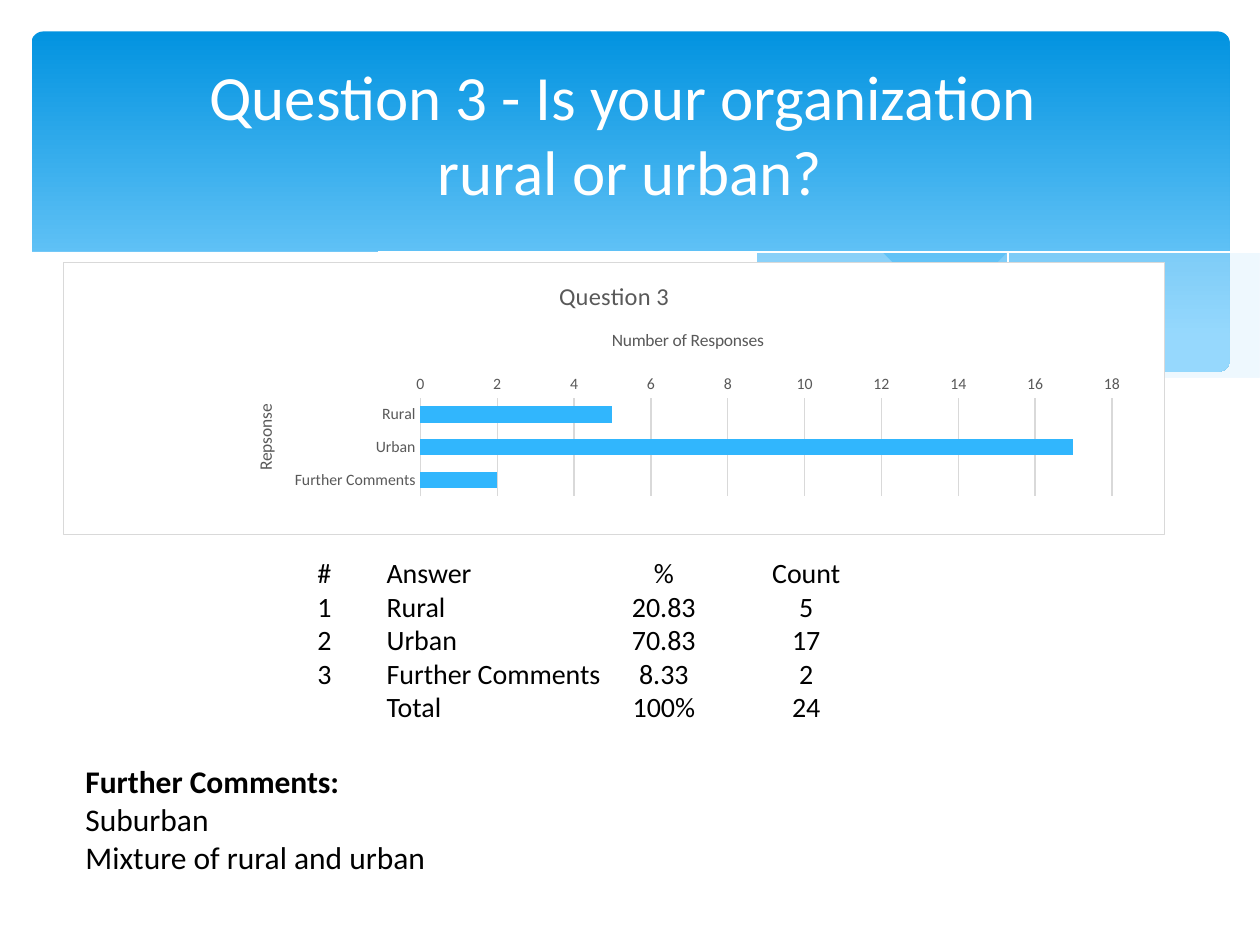
from lxml import etree
from pptx import Presentation
from pptx.chart.data import CategoryChartData
from pptx.dml.color import RGBColor
from pptx.enum.chart import XL_CHART_TYPE, XL_TICK_MARK
from pptx.enum.shapes import MSO_SHAPE
from pptx.enum.text import MSO_ANCHOR, MSO_AUTO_SIZE, PP_ALIGN
from pptx.oxml import parse_xml
from pptx.oxml.ns import nsdecls, qn
from pptx.util import Inches, Pt

BAR = XL_CHART_TYPE.BAR_CLUSTERED
NO_TICK = XL_TICK_MARK.NONE
ROUNDED = MSO_SHAPE.ROUNDED_RECTANGLE
MIDDLE = MSO_ANCHOR.MIDDLE
GROW = MSO_AUTO_SIZE.SHAPE_TO_FIT_TEXT
CENTER = PP_ALIGN.CENTER

FONT = "Calibri"
WHITE = RGBColor(0xFF, 0xFF, 0xFF)
BLACK = RGBColor(0, 0, 0)
GRAY = RGBColor(0x59, 0x59, 0x59)
RULE = RGBColor(0xD9, 0xD9, 0xD9)
BAR_BLUE = RGBColor(0x31, 0xB6, 0xFD)
BANNER_TOP = RGBColor(0x02, 0x93, 0xE0)
BANNER_END = RGBColor(0x83, 0xD3, 0xFE)
MIST = RGBColor(0xC6, 0xE7, 0xFC)

# Wave outlines: each is a list of curves joined end to end, in inches
RIGHT_WAVE = [
    [(9.76, 2), (9.21, 2.1), (8.61, 2.23), (7.79, 2.42), (6.61, 2.65)],
    [(6.61, 2.65), (7.19, 2.72), (7.69, 2.77), (8.14, 2.78), (8.63, 2.75),
     (9.05, 2.69), (9.42, 2.59), (9.76, 2.47)],
]
MIDDLE_WAVE = [
    [(8.93, 2.73), (8.07, 2.6), (7.06, 2.4), (6.29, 2.22), (5.55, 2.05),
     (4.89, 1.94), (4.2, 1.87), (3.61, 1.85), (2.86, 1.91)],
    [(2.86, 1.91), (3.62, 2.03), (4.49, 2.22), (5.66, 2.48), (6.5, 2.64),
     (7.22, 2.74), (7.85, 2.78), (8.38, 2.78), (8.93, 2.73)],
]
WHITE_WAVE = [
    [(9.77, 2.46), (9.4, 2.59), (8.99, 2.69), (8.5, 2.75), (8.09, 2.77),
     (7.44, 2.74), (6.68, 2.65), (5.79, 2.5), (4.47, 2.2), (3.65, 2.02),
     (2.92, 1.9), (2.3, 1.85), (1.77, 1.84), (1.19, 1.87), (0.76, 1.95),
     (0.46, 2.03), (0.23, 2.13)],
    [(0.23, 3.29), (9.77, 3.29)],
]
LEFT_LINE = [[(3.09, 1.95), (3.44, 1.9), (4.01, 1.87), (4.69, 1.89),
              (5.56, 1.97), (6.36, 2.08), (7.27, 2.26), (8.31, 2.51),
              (9.07, 2.72)]]
RIGHT_LINE = [[(6.13, 2.57), (6.95, 2.35), (7.76, 2.16), (8.66, 1.99),
               (9.24, 1.9), (9.75, 1.85)]]

ANSWERS = [
    ("#", "Answer", "%", "Count"),
    ("1", "Rural", "20.83", "5"),
    ("2", "Urban", "70.83", "17"),
    ("3", "Further Comments", "8.33", "2"),
    ("", "Total", "100%", "24"),
]
ANSWER_TABS = [(0.55, "l"), (2.75, "ctr"), (3.88, "ctr")]


def style_font(font, size, color, bold=False):
    for name, value in dict(name=FONT, size=Pt(size), bold=bold).items():
        setattr(font, name, value)
    font.color.rgb = color


def smooth(points, steps=5):
    """Catmull-Rom curve through the points."""
    ends = [points[0], *points, points[-1]]
    curve = []
    for a, b, c, d in zip(ends, ends[1:], ends[2:], ends[3:]):
        for t in (i / steps for i in range(steps)):
            curve.append(tuple(
                q + t * (r - p) / 2 + t**2 * (2 * p - 5 * q + 4 * r - w) / 2
                + t**3 * (3 * q - p - 3 * r + w) / 2
                for p, q, r, w in zip(a, b, c, d)))
    return curve + [points[-1]]


def add_wave(s, curves, fill=None, alpha=None):
    """A filled wave, or a white hairline when there is no fill."""
    points = [pt for curve in curves for pt in smooth(curve)]
    builder = s.shapes.build_freeform(*points[0], scale=Inches(1))
    builder.add_line_segments(points[1:], close=fill is not None)
    sp = builder.convert_to_shape()
    sp.shadow.inherit = False
    if fill is None:
        sp.fill.background()
        sp.line.color.rgb = WHITE
        sp.line.width = Pt(0)
        return
    sp.fill.solid()
    sp.fill.fore_color.rgb = fill
    sp.line.fill.background()
    if alpha:
        color = sp._element.spPr.find(qn("a:solidFill"))[0]
        etree.SubElement(color, qn("a:alpha")).set("val", str(alpha * 1000))


def add_banner(s):
    sp = s.shapes.add_shape(ROUNDED, Inches(0.25), Inches(0.25),
                            Inches(9.51), Inches(2.7))
    sp.adjustments[0] = 0.034
    sp.shadow.inherit = False
    sp.line.fill.background()
    sp.fill.gradient()
    sp.fill.gradient_angle = 270
    stops = ((0, BANNER_TOP), (0.9, BANNER_END))
    for stop, (position, color) in zip(sp.fill.gradient_stops, stops):
        stop.position = position
        stop.color.rgb = color


def set_layout(parent, **values):
    """Manual layout, as fractions of the chart area."""
    for old in parent.findall(qn("c:layout")):
        parent.remove(old)
    items = dict(xMode="edge", yMode="edge", **values)
    if "w" in values:
        items = dict(layoutTarget="inner", **items)
    layout = etree.Element(qn("c:layout"))
    manual = etree.SubElement(layout, qn("c:manualLayout"))
    for tag, value in items.items():
        etree.SubElement(manual, qn(f"c:{tag}")).set("val", str(value))
    tx = parent.find(qn("c:tx"))
    parent.insert(0 if tx is None else 1, layout)


def set_title(owner, text, size):
    tf = (owner.chart_title if hasattr(owner, "chart_title")
          else owner.axis_title).text_frame
    tf.text = text
    style_font(tf.paragraphs[0].runs[0].font, size, GRAY)


def add_response_chart(s):
    data = CategoryChartData()
    data.categories = ["Rural", "Urban", "Further Comments"]
    data.add_series("Series 1", (5, 17, 2))
    chart = s.shapes.add_chart(BAR, Inches(0.5), Inches(2.08), Inches(8.75),
                               Inches(2.17), data).chart
    chart.has_legend = False
    style_font(chart.font, 10, BLACK)
    set_title(chart, "Question 3", 14)

    plot = chart.plots[0]
    plot.gap_width = 100
    plot.vary_by_categories = False
    fill = plot.series[0].format.fill
    fill.solid()
    fill.fore_color.rgb = BAR_BLUE

    # Axes
    cat, val = chart.category_axis, chart.value_axis
    titles = ((cat, "Repsonse", 0.17, 0.51),
              (val, "Number of Responses", 0.495, 0.23))
    for axis, text, x, y in titles:
        set_title(axis, text, 10)
        set_layout(axis.axis_title._element, x=x, y=y)
        axis.major_tick_mark = axis.minor_tick_mark = NO_TICK
        style_font(axis.tick_labels.font, 9, GRAY)
    cat.reverse_order = True
    val.minimum_scale, val.maximum_scale, val.major_unit = 0, 18, 2
    val.format.line.fill.background()
    for line in (cat.format.line, val.major_gridlines.format.line):
        line.color.rgb = RULE
        line.width = Pt(0.75)

    # Plot position, chart background and border
    space = chart._chartSpace
    set_layout(space.chart.plotArea, x=0.324, y=0.498, w=0.628, h=0.361)
    space.chart.addnext(parse_xml(
        f'<c:spPr {nsdecls("c", "a")}><a:solidFill><a:srgbClr val="{WHITE}"/>'
        f'</a:solidFill><a:ln w="{Pt(0.75)}"><a:solidFill>'
        f'<a:srgbClr val="{RULE}"/></a:solidFill></a:ln></c:spPr>'))


def add_title(s, text):
    sp = s.shapes.title
    box = dict(left=0.5, top=0.37, width=9, height=1.37)
    for name, value in box.items():
        setattr(sp, name, Inches(value))
    tf = sp.text_frame
    tf.text = text
    tf.vertical_anchor = MIDDLE
    p = tf.paragraphs[0]
    p.alignment = CENTER
    for r in p.runs:
        style_font(r.font, 36, WHITE)
    s.shapes._spTree.append(sp._element)  # in front of the banner


def add_lines(s, box, lines, size, tabs=(), bold_first=False):
    tf = s.shapes.add_textbox(*map(Inches, box)).text_frame
    tf.word_wrap = True
    tf.auto_size = GROW
    for i, line in enumerate(lines):
        p = tf.paragraphs[0] if i == 0 else tf.add_paragraph()
        r = p.add_run()
        r.text = line
        style_font(r.font, size, BLACK, bold_first and i == 0)
        if tabs:
            stops = etree.SubElement(p._p.get_or_add_pPr(), qn("a:tabLst"))
            for position, align in tabs:
                tab = etree.SubElement(stops, qn("a:tab"))
                tab.set("pos", str(Inches(position)))
                tab.set("algn", align)


def main():
    prs = Presentation()
    prs.slide_width, prs.slide_height = Inches(10), Inches(7.5)
    s = prs.slides.add_slide(prs.slide_layouts[5])

    # Banner with waves
    add_banner(s)
    add_wave(s, RIGHT_WAVE, MIST, 29)
    add_wave(s, MIDDLE_WAVE, MIST, 40)
    add_wave(s, LEFT_LINE)
    add_wave(s, RIGHT_LINE)
    add_wave(s, WHITE_WAVE, WHITE)

    # Content
    add_response_chart(s)
    add_title(s, "Question 3 - Is your organization \vrural or urban?")
    add_lines(s, (2.42, 4.36, 5.25, 1.45), map("\t".join, ANSWERS), 16,
              tabs=ANSWER_TABS)
    add_lines(s, (0.58, 6, 5, 1.01),
              ["Further Comments:", "Suburban", "Mixture of rural and urban"],
              18, bold_first=True)
    prs.save("out.pptx")


if __name__ == "__main__":
    main()
